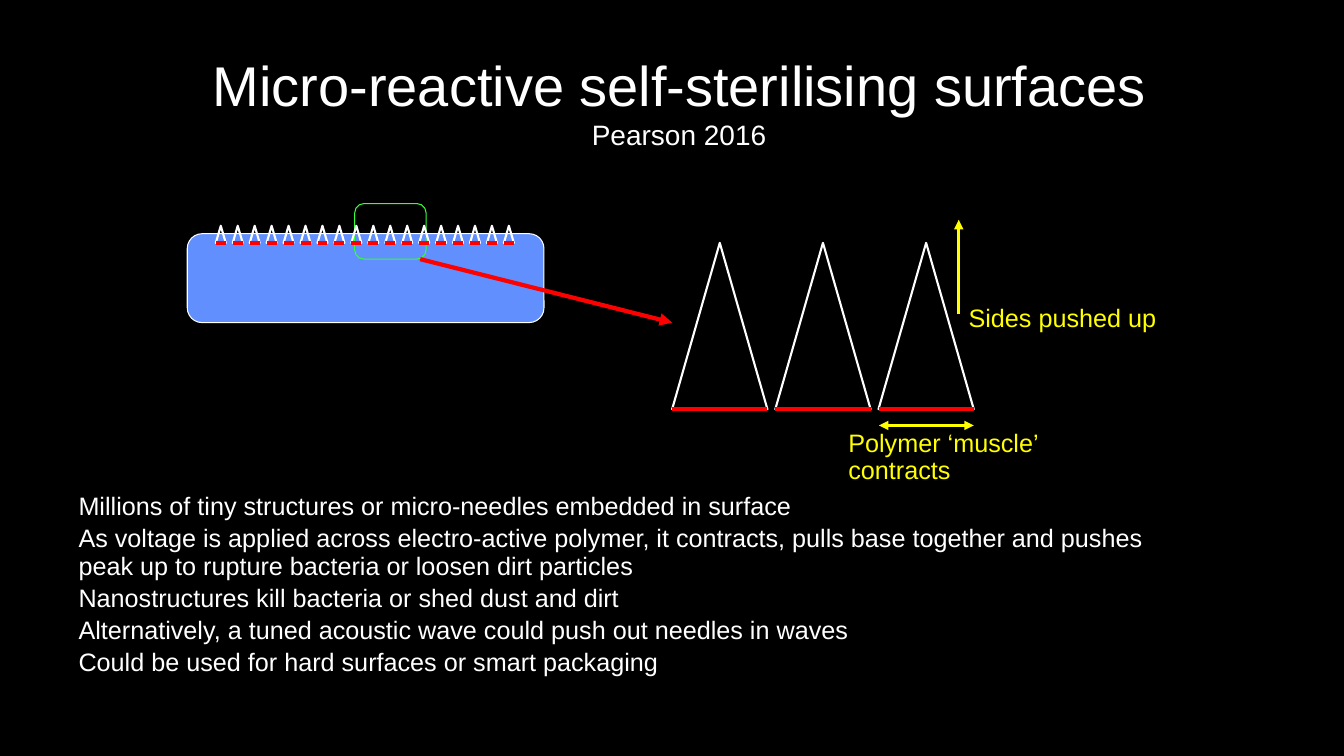
from lxml.etree import SubElement
from pptx import Presentation
from pptx.dml.color import RGBColor
from pptx.enum.shapes import MSO_CONNECTOR as Connector, MSO_SHAPE as Shape
from pptx.enum.text import MSO_ANCHOR as Anchor, PP_ALIGN as Align
from pptx.oxml.ns import qn
from pptx.util import Cm, Pt

WHITE, BLACK, RED, YELLOW = "FFFFFF", "000000", "FF0000", "FFFF00"
BLUE, GREEN = "618FFD", "35FF35"
BODY_FORMAT = {"line_spacing": 0.9, "space_before": Pt(3.6)}
TITLE_FORMAT = {"alignment": Align.CENTER}
POINTS = [
    "Millions of tiny structures or micro-needles embedded in surface",
    "As voltage is applied across electro-active polymer, it contracts, pulls base together "
    "and pushes peak up to rupture bacteria or loosen dirt particles",
    "Nanostructures kill bacteria or shed dust and dirt",
    "Alternatively, a tuned acoustic wave could push out needles in waves",
    "Could be used for hard surfaces or smart packaging",
]


def colour(value):
    return RGBColor.from_string(value)


def apply_format(target, values):
    for name, value in values.items():
        setattr(target, name, value)


def add_outline(shapes, kind, bounds, line, width, fill=None):
    shape = shapes.add_shape(kind, *map(Cm, bounds))
    shape.shadow.inherit = False
    if fill:
        shape.fill.solid()
        shape.fill.fore_color.rgb = colour(fill)
    else:
        shape.fill.background()
    shape.line.color.rgb = colour(line)
    shape.line.width = Pt(width)


def add_line(shapes, ends, line, width, arrowheads=()):
    connector = shapes.add_connector(Connector.STRAIGHT, *map(Cm, ends))
    connector.line.color.rgb = colour(line)
    connector.line.width = Pt(width)
    for end in arrowheads:
        SubElement(connector.line._get_or_add_ln(), qn(f"a:{end}"), type="triangle")
    SubElement(connector._element.spPr, qn("a:effectLst"))


def add_needle(page, left, top, width, height):
    needle = page.shapes.add_group_shape().shapes
    base = top + height
    add_outline(needle, Shape.ISOSCELES_TRIANGLE, (left, top, width, height), WHITE, 1.5)
    add_line(needle, (left, base, left + width, base), RED, 3)


def add_span(para, text, size, font_colour):
    span = para.add_run()
    span.text = text
    apply_format(span.font, {"name": "Arial", "size": Pt(size)})
    span.font.color.rgb = colour(font_colour)


def add_box(page, bounds, anchor=Anchor.TOP):
    frame = page.shapes.add_textbox(*map(Cm, bounds)).text_frame
    apply_format(frame, {"word_wrap": True, "vertical_anchor": anchor})
    return frame


def add_title(page):
    para = add_box(page, (4.72, 1.47, 24.79, 2.16), Anchor.MIDDLE).paragraphs[0]
    apply_format(para, TITLE_FORMAT)
    add_span(para, "Micro-reactive self-sterilising surfaces", 40, WHITE)
    para.add_line_break()
    add_span(para, "Pearson 2016", 20, WHITE)


def add_text(page, bounds, lines, font_colour):
    frame = add_box(page, bounds)
    for index, line in enumerate(lines):
        para = frame.add_paragraph() if index else frame.paragraphs[0]
        apply_format(para, BODY_FORMAT)
        add_span(para, line, 18, font_colour)


def main():
    deck = Presentation()
    apply_format(deck, {"slide_width": Cm(33.87), "slide_height": Cm(19.05)})
    page = deck.slides.add_slide(deck.slide_layouts[6])
    page.background.fill.solid()
    page.background.fill.fore_color.rgb = colour(BLACK)

    add_outline(page.shapes, Shape.ROUNDED_RECTANGLE, (4.72, 5.89, 8.99, 2.24), WHITE, 0.75, BLUE)
    add_title(page)
    add_text(page, (1.73, 12.32, 27.99, 2.59), POINTS, WHITE)
    add_text(page, (21.13, 10.72, 5.79, 1.4), ["Polymer ‘muscle’ contracts"], YELLOW)
    add_text(page, (24.16, 7.57, 5.38, 0.99), ["Sides pushed up"], YELLOW)

    add_outline(page.shapes, Shape.ROUNDED_RECTANGLE, (8.94, 5.13, 1.8, 1.4), GREEN, 0.75)
    for index in range(18):
        add_needle(page, 5.44 + index * 7.26 / 17, 5.69, 0.25, 0.43)
    for index in range(3):
        add_needle(page, 16.94 + index * 2.6, 6.12, 2.4, 4.19)

    add_line(page.shapes, (22.15, 10.72, 24.54, 10.72), YELLOW, 2.25, ("headEnd", "tailEnd"))
    add_line(page.shapes, (24.16, 7.92, 24.16, 5.54), YELLOW, 2.25, ("tailEnd",))
    add_line(page.shapes, (10.59, 6.53, 16.94, 8.13), RED, 3, ("tailEnd",))
    deck.save("out.pptx")


if __name__ == "__main__":
    main()
